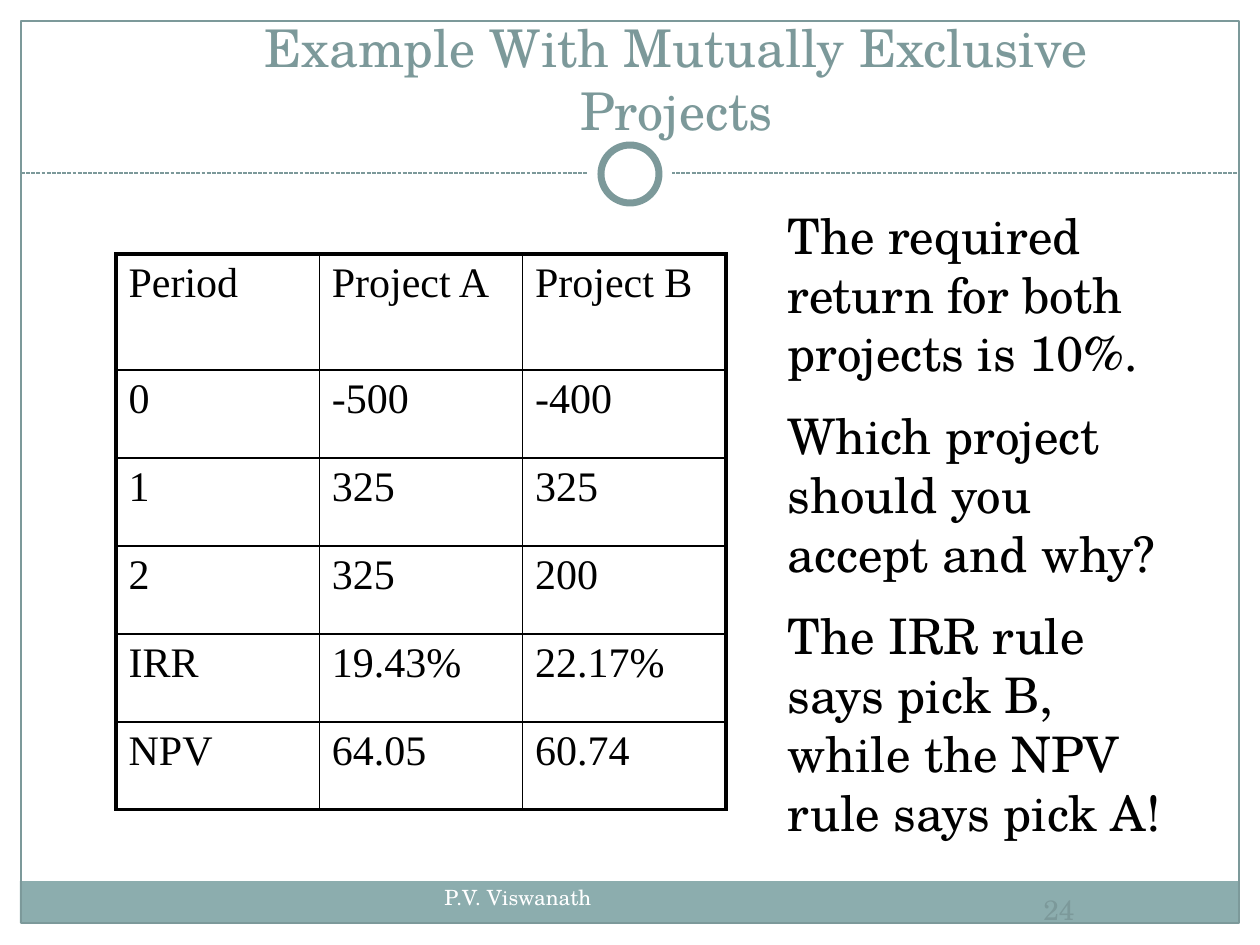
import pptx
import pptx.util
import pptx.dml.color
import pptx.enum.dml
import pptx.enum.shapes
import pptx.enum.text
import pptx.oxml
import pptx.oxml.ns

RGB = pptx.dml.color.RGBColor
SAGE = RGB(0x7C, 0x99, 0x9A)
BAND = RGB(0x8C, 0xAD, 0xAE)
WHITE = RGB(0xFF, 0xFF, 0xFF)
BLACK = RGB(0x00, 0x00, 0x00)
SERIF = "TeX Gyre Schola"
ROMAN = "Times New Roman"
FORM = pptx.enum.shapes.MSO_SHAPE
ALIGN = pptx.enum.text.PP_ALIGN
ANCHOR = pptx.enum.text.MSO_ANCHOR
FIT = pptx.enum.text.MSO_AUTO_SIZE
Pt = pptx.util.Pt

ROWS = [
    ("Period", "Project A", "Project B"),
    ("0", "-500", "-400"),
    ("1", "325", "325"),
    ("2", "325", "200"),
    ("IRR", "19.43%", "22.17%"),
    ("NPV", "64.05", "60.74"),
]
NOTES = [
    "The required return for both projects is 10%.",
    "Which project should you accept and why?",
    "The IRR rule says pick B, while the NPV rule says pick A!",
]


def px(num):
    return pptx.util.Inches(num / 126)


def place(item, box):
    item.left, item.top, item.width, item.height = map(px, box)


def write(para, text, size, color, font=SERIF, align=ALIGN.LEFT, gap=0):
    para.alignment = align
    para.space_before = Pt(gap)
    run = para.add_run()
    run.text = text
    run.font.name = font
    run.font.size = Pt(size)
    run.font.color.rgb = color


def shape(slide, form, box, fill=None, line=None, width=0.75):
    item = slide.shapes.add_shape(form, *map(px, box))
    item.shadow.inherit = False
    if fill is None:
        item.fill.background()
    else:
        item.fill.solid()
        item.fill.fore_color.rgb = fill
    if line is None:
        item.line.fill.background()
    else:
        item.line.color.rgb = line
        item.line.width = Pt(width)


def rule(slide, left, right, top):
    kind = pptx.enum.shapes.MSO_CONNECTOR.STRAIGHT
    line = slide.shapes.add_connector(kind, px(left), px(top), px(right), px(top))
    line.line.color.rgb = SAGE
    line.line.width = Pt(0.75)
    line.line.dash_style = pptx.enum.dml.MSO_LINE.SQUARE_DOT
    props = line._element.spPr
    props.append(props.makeelement(pptx.oxml.ns.qn("a:effectLst"), {}))


def label(slide, box, text, size, color, align=ALIGN.LEFT, anchor=ANCHOR.TOP):
    frame = slide.shapes.add_textbox(*map(px, box)).text_frame
    frame.word_wrap = True
    frame.vertical_anchor = anchor
    write(frame.paragraphs[0], text, size, color, align=align)


def title(slide, box, text):
    item = slide.shapes.title
    place(item, box)
    frame = item.text_frame
    frame.auto_size = FIT.NONE
    frame.vertical_anchor = ANCHOR.BOTTOM
    write(frame.paragraphs[0], text, 29.7, SAGE, align=ALIGN.CENTER)


def body(slide, box, lines):
    item = slide.placeholders[1]
    place(item, box)
    frame = item.text_frame
    frame.auto_size = FIT.NONE
    for num, text in enumerate(lines):
        para = frame.add_paragraph() if num else frame.paragraphs[0]
        write(para, text, 28, BLACK, gap=13.5 if num else 0)
        props = para._p.get_or_add_pPr()
        props.set("marL", "0")
        props.set("indent", "0")
        props.append(props.makeelement(pptx.oxml.ns.qn("a:buNone"), {}))


def border(cell, sides):
    props = cell._tc.get_or_add_tcPr()
    for spot, (side, thick) in enumerate(sides.items()):
        width = Pt(2.25 if thick else 1)
        line = pptx.oxml.parse_xml(
            f'<a:ln{side} {pptx.oxml.ns.nsdecls("a")} w="{width}"><a:solidFill>'
            f'<a:srgbClr val="{BLACK}"/></a:solidFill></a:ln{side}>')
        props.insert(spot, line)


def table(slide, box, rows, heights):
    high, wide = len(rows), len(rows[0])
    grid = slide.shapes.add_table(high, wide, *map(px, box)).table
    grid.first_row = grid.horz_banding = False
    for col in grid.columns:
        col.width = px(box[2] / wide)
    for r, texts in enumerate(rows):
        grid.rows[r].height = px(heights[r])
        for c, text in enumerate(texts):
            cell = grid.cell(r, c)
            cell.fill.background()
            write(cell.text_frame.paragraphs[0], text, 24, BLACK, ROMAN)
            border(cell, {"L": c == 0, "R": c == wide - 1,
                          "T": r == 0, "B": r == high - 1})


def main():
    deck = pptx.Presentation()
    deck.slide_width, deck.slide_height = px(1260), px(945)
    slide = deck.slides.add_slide(deck.slide_layouts[1])
    shape(slide, FORM.RECTANGLE, (20, 881, 1218, 42), BAND)
    shape(slide, FORM.RECTANGLE, (21, 21, 1218, 902), line=SAGE)
    rule(slide, 21, 1239, 173)
    shape(slide, FORM.OVAL, (588, 132, 84, 84), WHITE)
    shape(slide, FORM.OVAL, (601, 145, 58, 58), WHITE, SAGE, 4)
    label(slide, (432, 878, 426, 63), "P.V. Viswanath", 12, WHITE)
    label(slide, (908, 878, 302, 63), "24", 16, SAGE, ALIGN.CENTER, ANCHOR.MIDDLE)
    title(slide, (168, 42, 1017, 105), "Example With Mutually Exclusive Projects")
    table(slide, (116, 254, 610, 556), ROWS, [116] + [88] * 5)
    body(slide, (775, 199, 410, 665), NOTES)
    deck.save("out.pptx")


if __name__ == "__main__":
    main()
